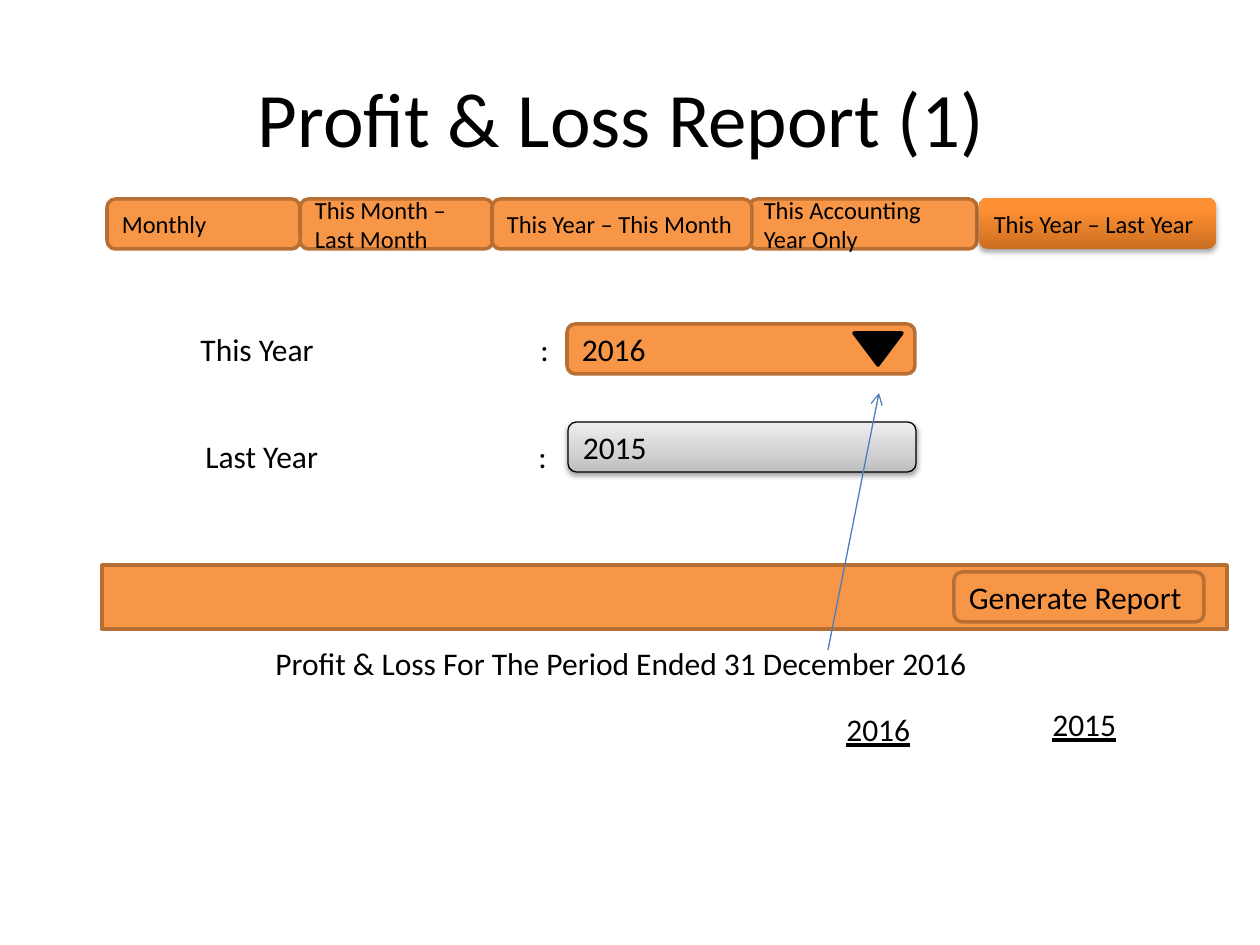
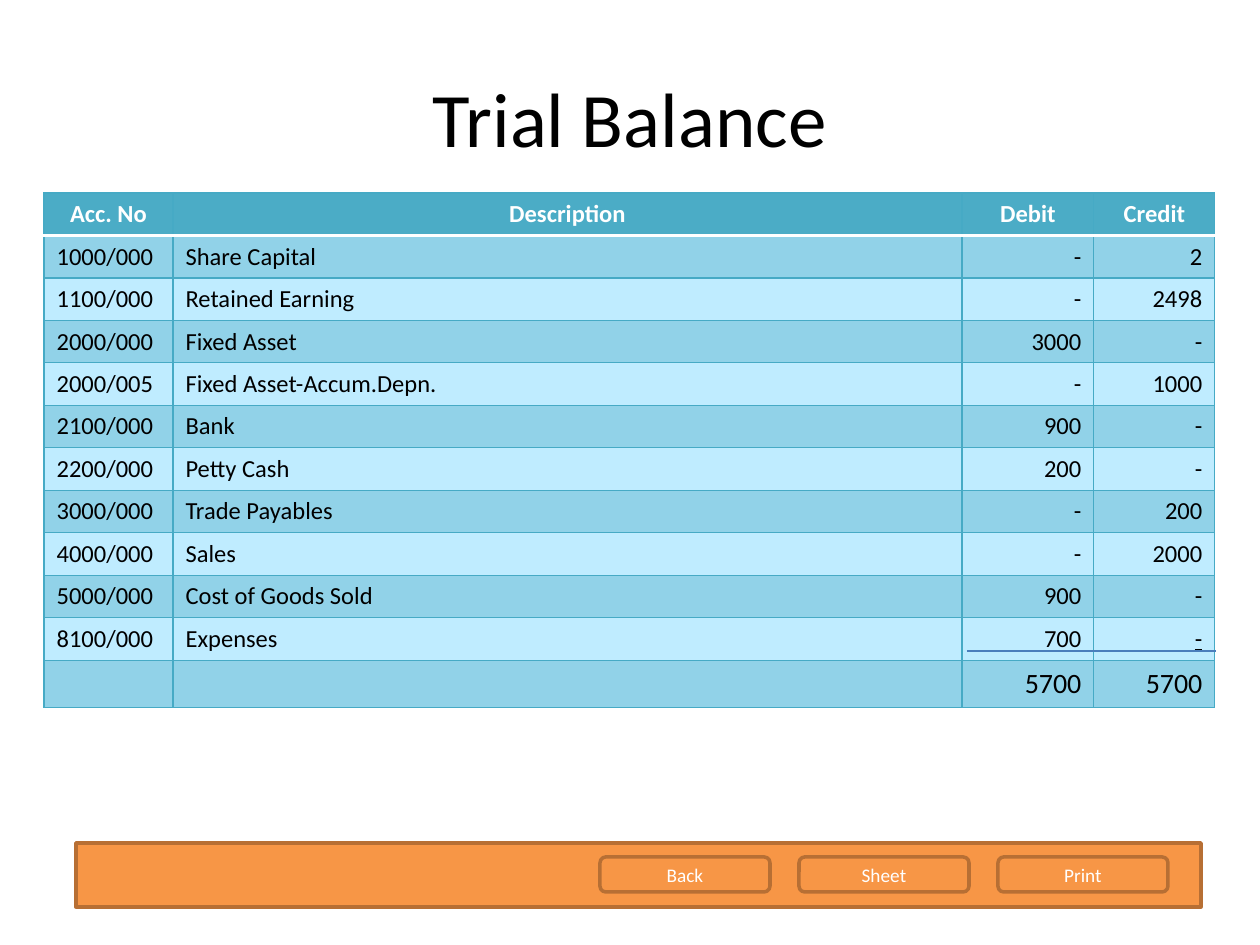
"""Build the Profit & Loss and Trial Balance screens of an accounting mock-up."""
from lxml import etree
from pptx import Presentation
from pptx.dml.color import RGBColor
from pptx.enum.shapes import MSO_CONNECTOR, MSO_SHAPE
from pptx.enum.text import MSO_ANCHOR, PP_ALIGN
from pptx.oxml.ns import qn
from pptx.util import Pt

EMU_PER_PX = 914400 / 126
SLIDE_WIDTH, SLIDE_HEIGHT = 1260, 945
TITLE_BOX = (63, 38, 1134, 157)
FONT = "Calibri"

BLACK = RGBColor(0x00, 0x00, 0x00)
WHITE = RGBColor(0xFF, 0xFF, 0xFF)
ORANGE = RGBColor(0xF7, 0x96, 0x46)
BROWN = RGBColor(0xB7, 0x6F, 0x34)
BLUE = RGBColor(0x4B, 0x7E, 0xBC)
TEAL = RGBColor(0x4B, 0xAC, 0xC6)
TEAL_EDGE = RGBColor(0x46, 0xAA, 0xC5)
BAND_DARK = RGBColor(0x91, 0xD2, 0xE8)
BAND_LIGHT = RGBColor(0xBF, 0xEC, 0xFF)
GREY_STOPS = [(0, "BDBDBD"), (35, "D1D1D1"), (100, "EEEEEE")]
ORANGE_STOPS = [(0, "CC6E20"), (80, "FF9034"), (100, "FF9136")]

RECTANGLE = MSO_SHAPE.RECTANGLE
ROUNDED = MSO_SHAPE.ROUNDED_RECTANGLE
MERGE = MSO_SHAPE.FLOWCHART_MERGE
STRAIGHT = MSO_CONNECTOR.STRAIGHT
LEFT, CENTER, RIGHT = PP_ALIGN.LEFT, PP_ALIGN.CENTER, PP_ALIGN.RIGHT
TOP, MIDDLE = MSO_ANCHOR.TOP, MSO_ANCHOR.MIDDLE

TAB_TOP, TAB_HEIGHT = 199, 50
TABS = [
    ("This Month – Last Month", 300, 193),
    ("This Accounting Year Only", 749, 228),
    ("This Year – This Month", 492, 260),
    ("Monthly", 107, 193),
]
ACTIVE_TAB = ("This Year – Last Year", (979, 198, 237, 51))
YEAR_LABELS = [
    ("Last Year\t:", (193, 431, 388, 50), 333),
    ("This Year\t:", (188, 324, 461, 50), 340),
]
REPORT_HEADING = ("Profit & Loss For The Period Ended 31 December 2016", (263, 638, 743, 50))
REPORT_YEARS = [("2015", (1040, 699, 89, 50)), ("2016", (834, 704, 89, 50))]

HEADERS = ["Acc. No", "Description", "Debit", "Credit"]
ACCOUNTS = [
    ("1000/000", "Share Capital", "-", "2"),
    ("1100/000", "Retained Earning", "-", "2498"),
    ("2000/000", "Fixed Asset", "3000", "-"),
    ("2000/005", "Fixed Asset-Accum.Depn.", "-", "1000"),
    ("2100/000", "Bank", "900", "-"),
    ("2200/000", "Petty Cash", "200", "-"),
    ("3000/000", "Trade Payables", "-", "200"),
    ("4000/000", "Sales", "-", "2000"),
    ("5000/000", "Cost of Goods Sold", "900", "-"),
    ("8100/000", "Expenses", "700", "-"),
]
TOTALS = ("", "", "5700", "5700")
COLUMN_WIDTHS = [129, 789, 132, 121]
COLUMN_ALIGNS = [LEFT, LEFT, RIGHT, RIGHT]
TABLE_LEFT, TABLE_TOP = 44, 193
ROW_HEIGHT, TOTAL_HEIGHT = 42, 47
TOTAL_LINES = [(967, 1096), (1086, 1216)]
TOTAL_LINE_TOP = 651
BAR_WIDTH, BAR_HEIGHT = 1125, 64
BUTTONS = ["Back", "Sheet", "Print"]
BUTTON_LEFT, BUTTON_PITCH = 600, 199


def px(length):
    """Turn pixels into EMU."""
    return round(length * EMU_PER_PX)


def place(box):
    """Turn a pixel box into EMU."""
    return [px(length) for length in box]


def write(frame, text, size=18, color=BLACK, align=LEFT, anchor=TOP,
          bold=False, underline=None, wrap=True):
    """Put one formatted paragraph into a text frame."""
    frame.word_wrap = wrap
    frame.vertical_anchor = anchor
    paragraph = frame.paragraphs[0]
    paragraph.alignment = align
    if not text:
        paragraph._p.get_or_add_endParaRPr().set("sz", str(size * 100))
        return paragraph
    run = paragraph.add_run()
    run.text = text
    font = run.font
    font.name, font.size, font.bold, font.underline = FONT, Pt(size), bold, underline
    font.color.rgb = color
    return paragraph


def add_text(slide, text, box, **style):
    """Add a text box."""
    return write(slide.shapes.add_textbox(*place(box)).text_frame, text, **style)


def add_box(shapes, kind, box, text="", fill=ORANGE, line=BROWN, weight=2, **style):
    """Add a filled preset shape, with text when given."""
    shape = shapes.add_shape(kind, *place(box))
    shape.shadow.inherit = False
    shape.fill.solid()
    shape.fill.fore_color.rgb = fill
    if line is None:
        shape.line.fill.background()
    else:
        shape.line.color.rgb = line
        shape.line.width = Pt(weight)
    if text:
        write(shape.text_frame, text, anchor=MIDDLE, **style)
    return shape


def add_glow(shape, stops, shadow_alpha):
    """Give a shape an upward gradient and a soft shadow below."""
    shape.fill.gradient()
    shape.fill.gradient_angle = 90
    properties = shape._element.spPr
    stop_list = properties.find(qn("a:gradFill")).find(qn("a:gsLst"))
    for stop in list(stop_list):
        stop_list.remove(stop)
    for position, color in stops:
        stop = etree.SubElement(stop_list, qn("a:gs"), pos=str(position * 1000))
        etree.SubElement(stop, qn("a:srgbClr"), val=color)
    shadow = etree.SubElement(properties.find(qn("a:effectLst")), qn("a:outerShdw"),
                              blurRad="40000", dist="21000", dir="5400000", rotWithShape="0")
    color = etree.SubElement(shadow, qn("a:srgbClr"), val=str(BLACK))
    etree.SubElement(color, qn("a:alpha"), val=str(shadow_alpha * 1000))


def add_line(slide, start, end, arrow=False):
    """Add a thin blue line, with an arrowhead at its end if asked."""
    connector = slide.shapes.add_connector(STRAIGHT, *place(start + end))
    connector.line.color.rgb = BLUE
    connector.line.width = Pt(0.75)
    if arrow:
        etree.SubElement(connector.line._get_or_add_ln(), qn("a:tailEnd"), type="arrow")
    etree.SubElement(connector._element.spPr, qn("a:effectLst"))


def add_slide(presentation, title):
    """Add a title-only slide."""
    slide = presentation.slides.add_slide(presentation.slide_layouts[5])
    holder = slide.shapes.title
    holder.left, holder.top, holder.width, holder.height = place(TITLE_BOX)
    write(holder.text_frame, title, size=44, align=CENTER, anchor=MIDDLE)
    return slide


def style_cell(cell, fill, top=(TEAL_EDGE, 0.75), bottom=(TEAL_EDGE, 0.75)):
    """Set the borders and the fill of a table cell."""
    properties = cell._tc.get_or_add_tcPr()
    side = (TEAL_EDGE, 0.75)
    for tag, (color, weight) in zip(("lnL", "lnR", "lnT", "lnB"), (side, side, top, bottom)):
        border = etree.SubElement(properties, qn("a:" + tag), w=str(Pt(weight)))
        solid = etree.SubElement(border, qn("a:solidFill"))
        etree.SubElement(solid, qn("a:srgbClr"), val=str(color))
    cell.fill.solid()
    cell.fill.fore_color.rgb = fill


def add_trial_table(slide):
    """Add the trial balance with its header, accounts and totals."""
    rows = [HEADERS, *ACCOUNTS, TOTALS]
    last = len(rows) - 1
    box = (TABLE_LEFT, TABLE_TOP, sum(COLUMN_WIDTHS), ROW_HEIGHT * last + TOTAL_HEIGHT)
    table = slide.shapes.add_table(len(rows), len(HEADERS), *place(box)).table
    table.horz_banding = False
    for column, width in zip(table.columns, COLUMN_WIDTHS):
        column.width = px(width)
    for index, values in enumerate(rows):
        table.rows[index].height = px(TOTAL_HEIGHT if index == last else ROW_HEIGHT)
        for number, value in enumerate(values):
            cell = table.cell(index, number)
            if index == 0:
                style_cell(cell, TEAL, bottom=(WHITE, 2))
                write(cell.text_frame, value, size=14, color=WHITE, align=CENTER, bold=True)
                continue
            top = (WHITE, 2) if index == 1 else (TEAL_EDGE, 0.75)
            style_cell(cell, BAND_DARK if index % 2 else BAND_LIGHT, top=top)
            closing = index == last - 1 and number == len(HEADERS) - 1
            write(cell.text_frame, value, size=16 if index == last else 14,
                  align=COLUMN_ALIGNS[number], underline=True if closing else None)


def build_profit_loss(presentation):
    """Build the report screen that compares two years."""
    slide = add_slide(presentation, "Profit & Loss Report (1) ")
    shapes = slide.shapes
    add_box(shapes, ROUNDED, (567, 324, 348, 50), "2016")
    add_box(shapes, RECTANGLE, (102, 565, BAR_WIDTH, BAR_HEIGHT))
    last_year = add_box(shapes, ROUNDED, (568, 422, 348, 50), "2015", line=BLACK, weight=0.75)
    add_glow(last_year, GREY_STOPS, 38)
    add_box(shapes, MERGE, (854, 333, 48, 32), fill=BLACK, line=BLACK)
    for text, box, colon_stop in YEAR_LABELS:
        paragraph = add_text(slide, text, box)
        tab_list = etree.SubElement(paragraph._p.get_or_add_pPr(), qn("a:tabLst"))
        etree.SubElement(tab_list, qn("a:tab"), pos=str(px(colon_stop)), algn="l")
    add_box(shapes, ROUNDED, (954, 572, 250, 50), "Generate Report")
    for text, left, width in TABS:
        add_box(shapes, ROUNDED, (left, TAB_TOP, width, TAB_HEIGHT), text, size=14)
    text, box = ACTIVE_TAB
    add_glow(add_box(shapes, ROUNDED, box, text, line=None, size=14), ORANGE_STOPS, 35)
    for text, box in REPORT_YEARS:
        add_text(slide, text, box, underline=True, wrap=False)
    add_text(slide, *REPORT_HEADING)
    add_line(slide, (828, 650), (879, 393), arrow=True)


def build_trial_balance(presentation):
    """Build the trial balance screen with its button bar."""
    slide = add_slide(presentation, "Trial Balance")
    add_trial_table(slide)
    for start, end in TOTAL_LINES:
        add_line(slide, (start, TOTAL_LINE_TOP), (end, TOTAL_LINE_TOP))
    button_bar = slide.shapes.add_group_shape().shapes
    add_box(button_bar, RECTANGLE, (76, 843, BAR_WIDTH, BAR_HEIGHT))
    for index, text in enumerate(BUTTONS):
        box = (BUTTON_LEFT + index * BUTTON_PITCH, 857, 170, 35)
        add_box(button_bar, ROUNDED, box, text, size=11, color=WHITE, align=CENTER)


def main():
    """Build and save the presentation."""
    presentation = Presentation()
    presentation.slide_width = px(SLIDE_WIDTH)
    presentation.slide_height = px(SLIDE_HEIGHT)
    build_profit_loss(presentation)
    build_trial_balance(presentation)
    presentation.save("out.pptx")


if __name__ == "__main__":
    main()
